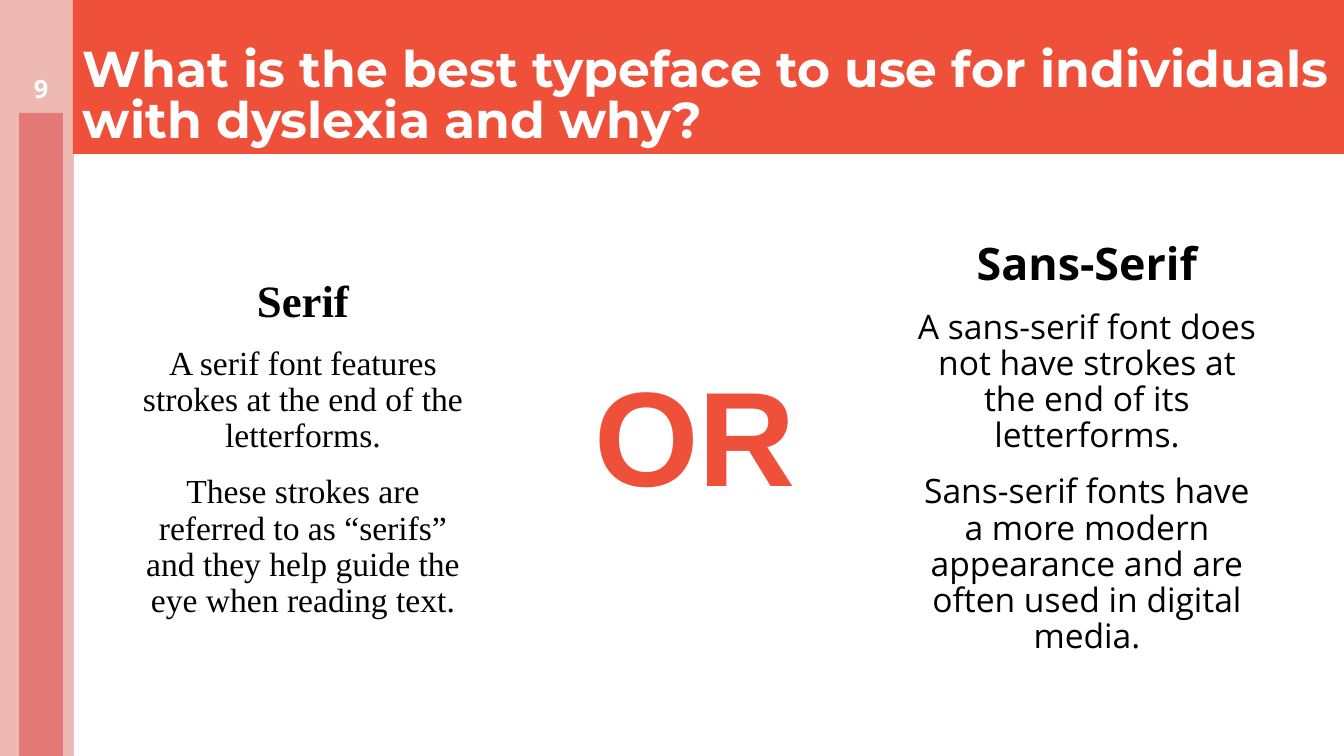
from pptx import Presentation
from pptx.dml.color import RGBColor
from pptx.enum.shapes import MSO_SHAPE
from pptx.enum.text import MSO_ANCHOR, PP_ALIGN
from pptx.util import Emu, Pt

RECTANGLE = MSO_SHAPE.RECTANGLE
TOP, MIDDLE, BOTTOM = MSO_ANCHOR.TOP, MSO_ANCHOR.MIDDLE, MSO_ANCHOR.BOTTOM
LEFT, CENTER = PP_ALIGN.LEFT, PP_ALIGN.CENTER

SLIDE_WIDTH, SLIDE_HEIGHT = 1344, 756
CORAL, ROSE, BLUSH = "EF5039", "E47A77", "EEB9B3"
WHITE, BLACK = "FFFFFF", "000000"


def px(length):
    """Turn pixels into EMU at 100.8 pixels to the inch."""
    return Emu(round(length * 914400 / 100.8))


def color(hex_string):
    """Return the colour for a hex string."""
    return RGBColor.from_string(hex_string)


def add_panel(slide, box, fill):
    """Add a plain filled rectangle."""
    panel = slide.shapes.add_shape(RECTANGLE, *map(px, box))
    panel.shadow.inherit = False
    panel.fill.solid()
    panel.fill.fore_color.rgb = color(fill)
    panel.line.fill.background()
    return panel


def add_text_area(slide, box):
    """Add an empty text box."""
    return slide.shapes.add_textbox(*map(px, box))


def write(area, lines, font, ink, anchor=MIDDLE, align=CENTER,
          line_spacing=0.9, before=12, after=2):
    """Fill an area with one paragraph per (text, size, bold) line."""
    frame = area.text_frame
    frame.word_wrap = True
    frame.vertical_anchor = anchor
    for index, (text, size, bold) in enumerate(lines):
        paragraph = frame.add_paragraph() if index else frame.paragraphs[0]
        paragraph.alignment = align
        paragraph.line_spacing = line_spacing
        paragraph.space_before = Pt(before)
        paragraph.space_after = Pt(after)
        run = paragraph.add_run()
        run.text = text
        run.font.name = font
        run.font.size = Pt(size)
        run.font.bold = bold
        run.font.color.rgb = color(ink)


def add_title_band(slide, box, question):
    """Add the coral band holding the question."""
    band = add_panel(slide, box, CORAL)
    write(band, [(question, 36, True)], "Montserrat", WHITE, BOTTOM, LEFT,
          line_spacing=0.85, before=0, after=0)


def add_typeface(slide, box, font, heading, descriptions):
    """Describe one typeface family, set in that family."""
    lines = [(heading, 32, True)] + [(text, 24, False) for text in descriptions]
    write(add_text_area(slide, box), lines, font, BLACK)


def add_comparison(slide, box):
    """Set serif and sans-serif side by side with OR between them."""
    left, top, width, height = box
    column = 362
    serif = (left, top, column, height)
    sans = (left + width - column, top, column, height)
    between = (left + (width - column) // 2, top + 42, column, height - 96)
    add_typeface(slide, serif, "Times New Roman", "Serif", [
        "A serif font features strokes at the end of the letterforms.",
        "These strokes are referred to as “serifs” and they help guide the "
        "eye when reading text.",
    ])
    add_typeface(slide, sans, "Open Sans", "Sans-Serif", [
        "A sans-serif font does not have strokes at the end of its letterforms.",
        "Sans-serif fonts have a more modern appearance and are often used in "
        "digital media.",
    ])
    write(add_text_area(slide, between), [("OR", 96, True)], "Arial", CORAL)


def add_side_strip(slide, box, page):
    """Add the page number with the rose bar running below it."""
    left, top, width, height = box
    add_panel(slide, (left, top + 40, width, height - 40), ROSE)
    number = add_text_area(slide, (left, top, width, 33))
    frame = number.text_frame
    frame.margin_left = frame.margin_right = 0
    frame.margin_top = frame.margin_bottom = 0
    write(number, [(page, 18, True)], "Open Sans", WHITE, TOP,
          line_spacing=1.0, before=0, after=0)


def main():
    """Build the slide and save it."""
    presentation = Presentation()
    presentation.slide_width = px(SLIDE_WIDTH)
    presentation.slide_height = px(SLIDE_HEIGHT)
    slide = presentation.slides.add_slide(presentation.slide_layouts[6])
    slide.background.fill.solid()
    slide.background.fill.fore_color.rgb = color(BLUSH)

    add_panel(slide, (74, 125, SLIDE_WIDTH - 74, SLIDE_HEIGHT - 125), WHITE)
    add_title_band(
        slide, (73, 0, SLIDE_WIDTH - 73, 154),
        "What is the best typeface to use for individuals with dyslexia and why?")
    add_comparison(slide, (122, 179, 1146, 540))
    add_side_strip(slide, (19, 73, 44, SLIDE_HEIGHT - 73), "9")
    presentation.save("out.pptx")


if __name__ == "__main__":
    main()
